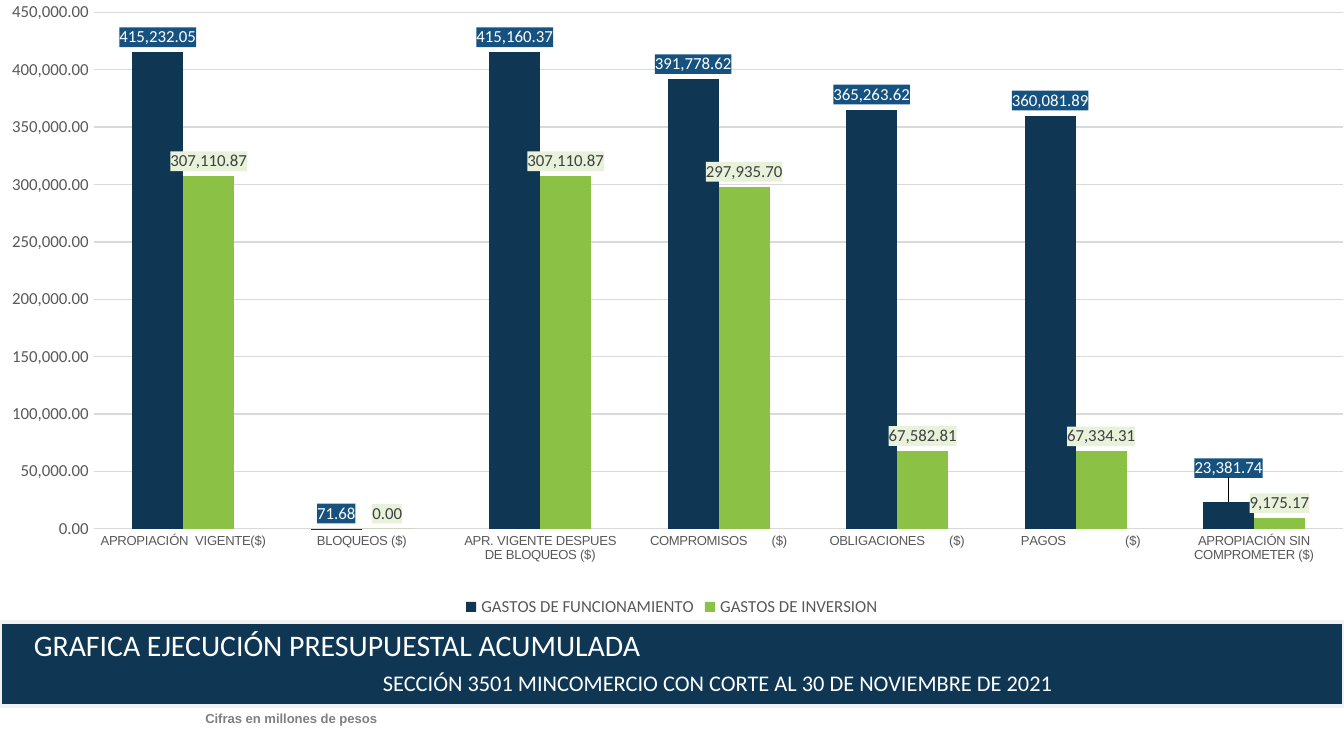
from copy import deepcopy
from dataclasses import dataclass

from lxml import etree
from pptx import Presentation
from pptx.chart.data import CategoryChartData
from pptx.dml.color import RGBColor
from pptx.enum.chart import XL_CHART_TYPE, XL_LABEL_POSITION, XL_LEGEND_POSITION, XL_TICK_MARK
from pptx.enum.text import MSO_ANCHOR, MSO_AUTO_SIZE, PP_ALIGN
from pptx.oxml import parse_xml
from pptx.oxml.ns import nsdecls, qn
from pptx.util import Cm, Pt

COLUMNS = XL_CHART_TYPE.COLUMN_CLUSTERED
OUTSIDE = XL_LABEL_POSITION.OUTSIDE_END
BOTTOM = XL_LEGEND_POSITION.BOTTOM
NO_TICK = XL_TICK_MARK.NONE
MIDDLE = MSO_ANCHOR.MIDDLE
NO_FIT = MSO_AUTO_SIZE.NONE
LEFT, CENTER = PP_ALIGN.LEFT, PP_ALIGN.CENTER


@dataclass(frozen=True)
class Theme:
    navy: str = "0F3754"
    green: str = "8BC145"
    blue: str = "16527F"
    pale: str = "E8F2DA"
    white: str = "FFFFFF"
    dark: str = "404040"
    text: str = "595959"
    gray: str = "808080"
    grid: str = "D9D9D9"
    edge: str = "F2F2F2"
    main: str = "Calibri"
    alt: str = "Arial"
    head: float = 16
    sub: float = 12
    label: float = 9
    small: float = 7


@dataclass(frozen=True)
class Series:
    name: str
    values: tuple
    color: str
    back: str
    ink: str


@dataclass(frozen=True)
class Line:
    text: str
    size: float
    align: PP_ALIGN
    indent: Cm
    before: float


THEME = Theme()
FORMAT = "#,##0.00"
WIDTH, HEIGHT = Cm(25.4), Cm(14.29)
BAND_TOP, BAND_END = Cm(11.76), Cm(13.34)

STAGES = (
    "APROPIACIÓN  VIGENTE($)",
    "BLOQUEOS ($)",
    "APR. VIGENTE DESPUES DE BLOQUEOS ($)",
    "COMPROMISOS       ($)",
    "OBLIGACIONES       ($)",
    "   PAGOS                 ($)",
    "APROPIACIÓN SIN COMPROMETER ($)",
)
COSTS = (
    Series("GASTOS DE FUNCIONAMIENTO",
           (415232.05, 71.68, 415160.37, 391778.62, 365263.62, 360081.89, 23381.74),
           THEME.navy, THEME.blue, THEME.white),
    Series("GASTOS DE INVERSION",
           (307110.87, 0, 307110.87, 297935.70, 67582.81, 67334.31, 9175.17),
           THEME.green, THEME.pale, THEME.dark),
)
LINES = (
    Line("GRAFICA EJECUCIÓN PRESUPUESTAL ACUMULADA", THEME.head, LEFT, Cm(0.64), 0),
    Line("SECCIÓN 3501 MINCOMERCIO CON CORTE AL 30 DE NOVIEMBRE DE 2021",
         THEME.sub, CENTER, Cm(1.74), 5),
)


def paint(font, size: float, color: str, face: str, bold: bool = False) -> None:
    font.size, font.name, font.bold = Pt(size), face, bold
    font.color.rgb = RGBColor.from_string(color)


def place(**parts: float) -> etree.ElementBase:
    """Manual chart layout; the parts come in schema order."""
    items = "".join(f'<c:{key} val="{val}"/>' for key, val in parts.items())
    return parse_xml(f'<c:layout {nsdecls("c")}><c:manualLayout>{items}'
                     '</c:manualLayout></c:layout>')


def label_bars(plot, cost: Series, bars) -> None:
    bars.format.fill.solid()
    bars.format.fill.fore_color.rgb = RGBColor.from_string(cost.color)
    bars.invert_if_negative = False
    tags = bars.data_labels
    tags.show_value, tags.position = True, OUTSIDE
    tags.number_format, tags.number_format_is_linked = FORMAT, False
    paint(tags.font, THEME.label, cost.ink, THEME.main)
    back = parse_xml(f'<c:spPr {nsdecls("c", "a")}><a:solidFill>'
                     f'<a:srgbClr val="{cost.back}"/></a:solidFill></c:spPr>')
    bars._element.find(qn("c:dLbls")).find(qn("c:txPr")).addprevious(back)


def raise_label(bars, index: int, cost: Series, shift: float) -> None:
    """Lift one label above its usual place."""
    tag = bars.points[index].data_label
    paint(tag.font, THEME.label, cost.ink, THEME.main)
    tag.position = OUTSIDE
    group = bars._element.find(qn("c:dLbls"))
    node = group.find(qn("c:dLbl"))
    node.find(qn("c:idx")).addnext(place(x=0, y=shift))
    node.find(qn("c:txPr")).addprevious(deepcopy(group.find(qn("c:spPr"))))


def draw_chart(slide) -> None:
    data = CategoryChartData(number_format=FORMAT)
    data.categories = STAGES
    for cost in COSTS:
        data.add_series(cost.name, cost.values)
    chart = slide.shapes.add_chart(COLUMNS, 0, 0, WIDTH, BAND_TOP, data).chart
    paint(chart.font, THEME.label, THEME.text, THEME.main)
    chart.has_title = False

    # Axes
    stage, money = chart.category_axis, chart.value_axis
    for axis, size, face in ((stage, THEME.small, THEME.alt),
                             (money, THEME.label, THEME.main)):
        axis.major_tick_mark = axis.minor_tick_mark = NO_TICK
        axis.format.line.fill.background()
        paint(axis.tick_labels.font, size, THEME.text, face)
    money.minimum_scale, money.maximum_scale, money.major_unit = 0, 450000, 50000
    money.tick_labels.number_format = FORMAT
    money.tick_labels.number_format_is_linked = False
    grid = money.major_gridlines.format.line
    grid.width = Pt(0.75)
    grid.color.rgb = RGBColor.from_string(THEME.grid)

    # Legend
    chart.has_legend = True
    chart.legend.position, chart.legend.include_in_layout = BOTTOM, False
    paint(chart.legend.font, THEME.label, THEME.text, THEME.main)

    # Bars and labels
    plot = chart.plots[0]
    plot.gap_width, plot.overlap, plot.vary_by_categories = 150, 0, False
    for cost, bars in zip(COSTS, plot.series):
        label_bars(plot, cost, bars)
    raise_label(plot.series[0], len(STAGES) - 1, COSTS[0], -0.03)

    # Plot area
    area = chart._chartSpace.chart.plotArea
    for old in area.findall(qn("c:layout")):
        area.remove(old)
    area.insert(0, place(layoutTarget="inner", xMode="edge", yMode="edge",
                         x=0.07, y=0.02, w=0.93, h=0.83))


def draw_band(slide) -> None:
    band = slide.shapes.title
    band.left, band.top, band.width, band.height = 0, BAND_TOP, WIDTH, BAND_END - BAND_TOP
    band.fill.solid()
    band.fill.fore_color.rgb = RGBColor.from_string(THEME.navy)
    band.line.color.rgb = RGBColor.from_string(THEME.edge)
    band.line.width = Pt(2.25)
    frame = band.text_frame
    frame.margin_left = frame.margin_right = frame.margin_top = frame.margin_bottom = 0
    frame.vertical_anchor, frame.auto_size, frame.word_wrap = MIDDLE, NO_FIT, True
    frame.text = "\n".join(line.text for line in LINES)
    for line, para in zip(LINES, frame.paragraphs):
        para.alignment, para.line_spacing = line.align, 0.9
        para.space_before = Pt(line.before)
        para._p.get_or_add_pPr().set("marL", str(line.indent))
        paint(para.font, line.size, THEME.white, THEME.main)


def draw_note(slide) -> None:
    box = slide.shapes.add_textbox(Cm(3.63), BAND_END, Cm(4.42), Cm(0.53))
    box.text_frame.word_wrap = True
    para = box.text_frame.paragraphs[0]
    para.text, para.line_spacing = "Cifras en millones de pesos", 0.9
    paint(para.font, THEME.small, THEME.gray, THEME.alt, bold=True)


def main() -> None:
    deck = Presentation()
    deck.slide_width, deck.slide_height = WIDTH, HEIGHT
    slide = deck.slides.add_slide(deck.slide_layouts[5])
    draw_chart(slide)
    draw_band(slide)
    draw_note(slide)
    deck.save("out.pptx")


if __name__ == "__main__":
    main()
